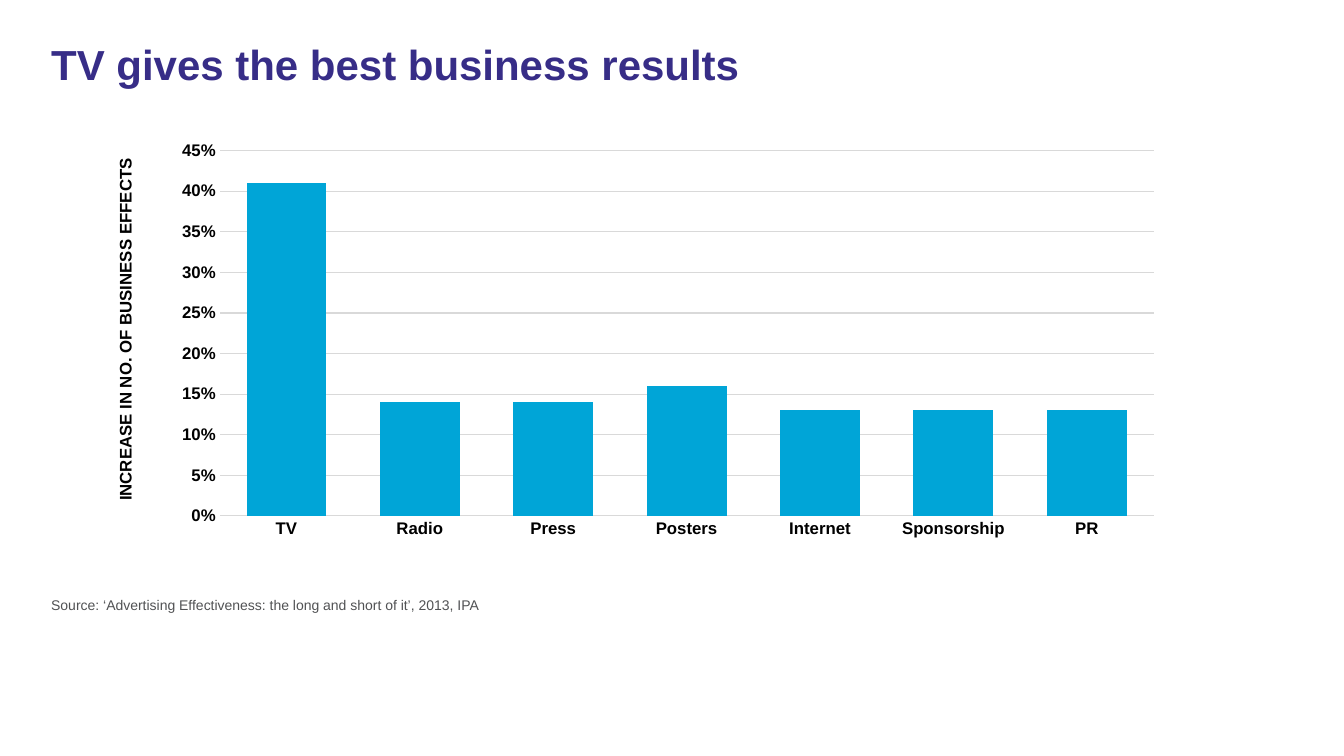
from lxml import etree
from pptx import Presentation
from pptx.chart.data import CategoryChartData
from pptx.dml.color import RGBColor
from pptx.enum.chart import XL_CHART_TYPE as ChartType, XL_TICK_MARK as TickMark
from pptx.enum.text import PP_ALIGN as Align
from pptx.oxml.ns import qn
from pptx.util import Inches, Pt

BUSINESS_EFFECTS = {
    "TV": 0.41,
    "Radio": 0.14,
    "Press": 0.14,
    "Posters": 0.16,
    "Internet": 0.13,
    "Sponsorship": 0.13,
    "PR": 0.13,
}


def color(hex_string):
    return RGBColor.from_string(hex_string)


def set_font(font, size, hex_color, bold=False):
    font.name = SlideBuilder.FONT
    font.size = Pt(size)
    font.bold = bold
    font.color.rgb = color(hex_color)


def set_line(line, hex_color):
    line.color.rgb = color(hex_color)
    line.width = Pt(0.75)


def set_plot_layout(chart, x, y, w, h):
    """Fix the inner plot area as fractions of the chart frame."""
    plot_area = chart._chartSpace.chart.plotArea
    for old_layout in plot_area.findall(qn("c:layout")):
        plot_area.remove(old_layout)
    layout = etree.Element(qn("c:layout"))
    manual = etree.SubElement(layout, qn("c:manualLayout"))
    settings = dict(layoutTarget="inner", xMode="edge", yMode="edge", x=x, y=y, w=w, h=h)
    for tag, value in settings.items():
        etree.SubElement(manual, qn(f"c:{tag}")).set("val", str(value))
    plot_area.insert(0, layout)


class SlideBuilder:
    FONT = "Arial"
    BLACK = "000000"
    TITLE = "372D87"
    SOURCE = "515254"
    BAR = "00A5D7"
    GRID = "D9D9D9"

    def __init__(self, slide):
        self.slide = slide

    def add_text(self, text, left, top, width, height, *, size, hex_color,
                 bold=False, align=Align.LEFT, rotation=0, line_spacing=1.0):
        box = self.slide.shapes.add_textbox(
            Inches(left), Inches(top), Inches(width), Inches(height))
        box.rotation = rotation
        box.text_frame.word_wrap = True
        paragraph = box.text_frame.paragraphs[0]
        paragraph.alignment = align
        paragraph.line_spacing = line_spacing
        run = paragraph.add_run()
        run.text = text
        set_font(run.font, size, hex_color, bold)

    def add_column_chart(self, values, left, top, width, height):
        data = CategoryChartData(number_format="0%")
        data.categories = values.keys()
        data.add_series("Series 1", values.values())
        chart = self.slide.shapes.add_chart(
            ChartType.COLUMN_CLUSTERED, Inches(left), Inches(top),
            Inches(width), Inches(height), data).chart
        chart.has_title = False
        chart.has_legend = False
        set_font(chart.font, 10, self.BLACK)
        set_plot_layout(chart, x=0.056, y=0.116, w=0.811, h=0.771)

        plot = chart.plots[0]
        plot.vary_by_categories = False
        plot.gap_width = 67
        plot.overlap = -2
        fill = plot.series[0].format.fill
        fill.solid()
        fill.fore_color.rgb = color(self.BAR)

        for axis in (chart.category_axis, chart.value_axis):
            axis.major_tick_mark = axis.minor_tick_mark = TickMark.NONE
            set_font(axis.tick_labels.font, 12, self.BLACK, bold=True)
        set_line(chart.category_axis.format.line, self.GRID)

        value_axis = chart.value_axis
        value_axis.minimum_scale = 0
        value_axis.maximum_scale = 0.45
        value_axis.major_unit = 0.05
        value_axis.format.line.fill.background()
        value_axis.has_major_gridlines = True
        set_line(value_axis.major_gridlines.format.line, self.GRID)
        value_axis.tick_labels.number_format = "0%"
        value_axis.tick_labels.number_format_is_linked = False


def main():
    presentation = Presentation()
    presentation.slide_width = Inches(13.33)
    presentation.slide_height = Inches(7.5)
    builder = SlideBuilder(presentation.slides.add_slide(presentation.slide_layouts[6]))

    builder.add_text("TV gives the best business results", 0.41, 0.39, 12.4, 1.12,
                     size=30, hex_color=builder.TITLE, bold=True, line_spacing=0.9)
    builder.add_text("Source: ‘Advertising Effectiveness: the long and short of it’, 2013, IPA",
                     0.41, 5.87, 12.4, 0.33, size=10, hex_color=builder.SOURCE)
    builder.add_column_chart(BUSINESS_EFFECTS, 1.54, 0.95, 11.42, 4.7)
    builder.add_text("INCREASE IN NO. OF BUSINESS EFFECTS", -0.81, 3.12, 4.1, 0.3,
                     size=12, hex_color=builder.BLACK, bold=True,
                     align=Align.CENTER, rotation=270)
    presentation.save("out.pptx")


if __name__ == "__main__":
    main()
